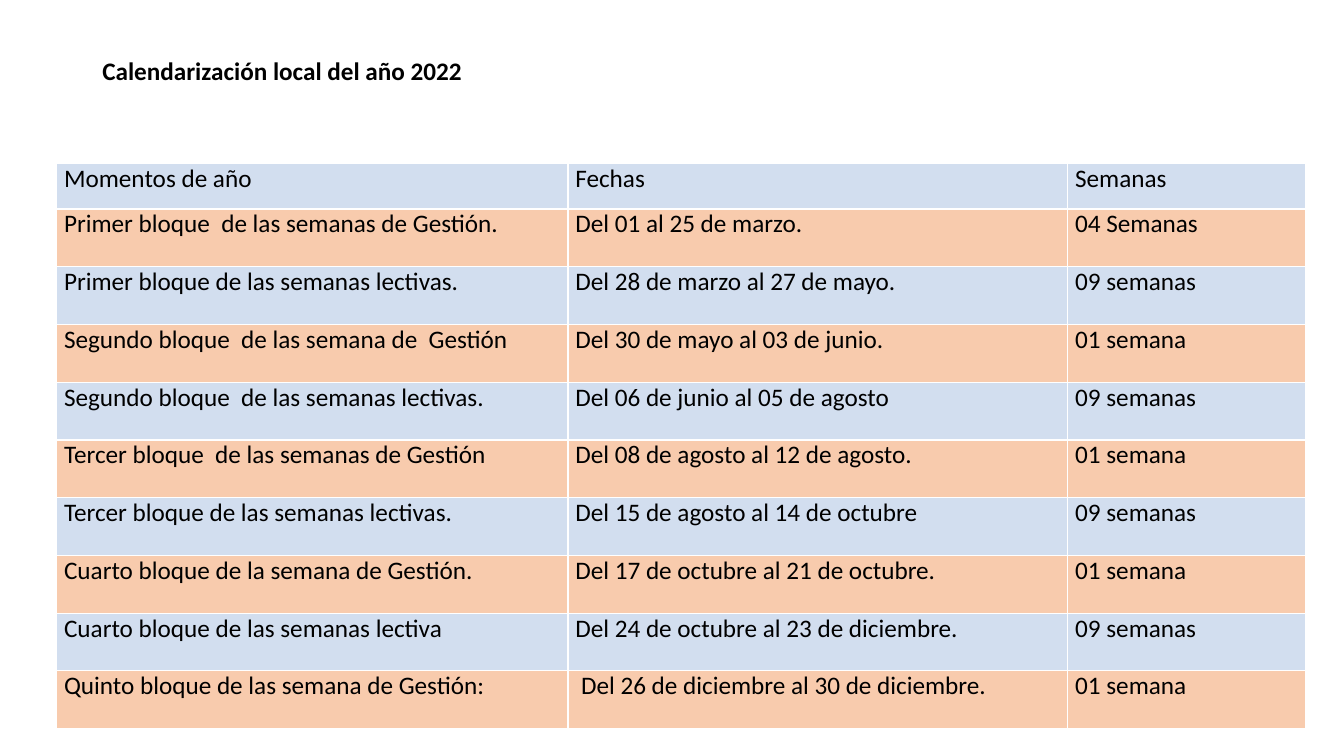
import pptx
import pptx.util
import pptx.dml.color
import pptx.enum.text
import pptx.oxml
import pptx.oxml.ns
from dataclasses import dataclass

PX = 9525  # EMU per px, 96 px to the inch


@dataclass(frozen=True)
class Theme:
    font: str = "Calibri"
    size: int = 18
    ink: str = "000000"
    rule: str = "FFFFFF"
    bands: tuple = ("D2DEEF", "F8CBAD")


def px(count):
    return pptx.util.Emu(count * PX)


def color(code):
    return pptx.dml.color.RGBColor.from_string(code)


class Deck:
    def __init__(self, theme, width, height):
        self.theme = theme
        self.file = pptx.Presentation()
        self.file.slide_width, self.file.slide_height = px(width), px(height)
        self.slide = self.file.slides.add_slide(self.file.slide_layouts[6])

    def style(self, para, bold=False):
        font = para.font
        font.name, font.size = self.theme.font, pptx.util.Pt(self.theme.size)
        font.bold = bold
        font.color.rgb = color(self.theme.ink)

    def title(self, text, left, top, width, height, foot):
        box = self.slide.shapes.add_textbox(*map(px, (left, top, width, height)))
        frame = box.text_frame
        frame.word_wrap = True
        frame.vertical_anchor = pptx.enum.text.MSO_ANCHOR.MIDDLE
        frame.margin_bottom = px(foot)
        para = frame.paragraphs[0]
        para.text, para.line_spacing = text, 0.9
        self.style(para, bold=True)

    def border(self, cell):
        props = cell._tc.get_or_add_tcPr()
        for side in "LRTB":
            props.append(pptx.oxml.parse_xml(
                f'<a:ln{side} {pptx.oxml.ns.nsdecls("a")} w="12700"><a:solidFill>'
                f'<a:srgbClr val="{self.theme.rule}"/></a:solidFill></a:ln{side}>'))

    def cell(self, cell, text, fill):
        cell.margin_left = cell.margin_right = px(7)
        cell.margin_top = cell.margin_bottom = 0
        self.border(cell)
        cell.fill.solid()
        cell.fill.fore_color.rgb = color(fill)
        para = cell.text_frame.paragraphs[0]
        para.text = text
        para.alignment = pptx.enum.text.PP_ALIGN.JUSTIFY
        para.space_before = pptx.util.Pt(0.1)
        self.style(para)

    def table(self, rows, left, top, widths, heights):
        frame = self.slide.shapes.add_table(
            len(rows), len(widths), px(left), px(top),
            px(sum(widths)), px(sum(heights)))
        grid = frame.table
        grid.first_row = grid.horz_banding = False
        for col, width in zip(grid.columns, widths):
            col.width = px(width)
        for r, (row, height) in enumerate(zip(rows, heights)):
            grid.rows[r].height = px(height)
            for c, text in enumerate(row):
                self.cell(grid.cell(r, c), text, self.theme.bands[r % 2])


DATES = [
    ("Momentos de año", "Fechas", "Semanas"),
    ("Primer bloque  de las semanas de Gestión.", "Del 01 al 25 de marzo.", "04 Semanas"),
    ("Primer bloque de las semanas lectivas.", "Del 28 de marzo al 27 de mayo.", "09 semanas"),
    ("Segundo bloque  de las semana de  Gestión", "Del 30 de mayo al 03 de junio.", "01 semana"),
    ("Segundo bloque  de las semanas lectivas.", "Del 06 de junio al 05 de agosto", "09 semanas"),
    ("Tercer bloque  de las semanas de Gestión", "Del 08 de agosto al 12 de agosto.", "01 semana"),
    ("Tercer bloque de las semanas lectivas.", "Del 15 de agosto al 14 de octubre", "09 semanas"),
    ("Cuarto bloque de la semana de Gestión.", "Del 17 de octubre al 21 de octubre.", "01 semana"),
    ("Cuarto bloque de las semanas lectiva", "Del 24 de octubre al 23 de diciembre.", "09 semanas"),
    ("Quinto bloque de las semana de Gestión:", " Del 26 de diciembre al 30 de diciembre.", "01 semana"),
]


def main():
    deck = Deck(Theme(), 1280, 720)
    # Heading
    deck.title("Calendarización local del año 2022", 88, 38, 1084, 90, foot=33)
    # Calendar: a short header row, then equal rows
    deck.table(DATES, 54, 156, (487, 476, 226), [43] + [55] * (len(DATES) - 1))
    deck.file.save("out.pptx")


if __name__ == "__main__":
    main()
